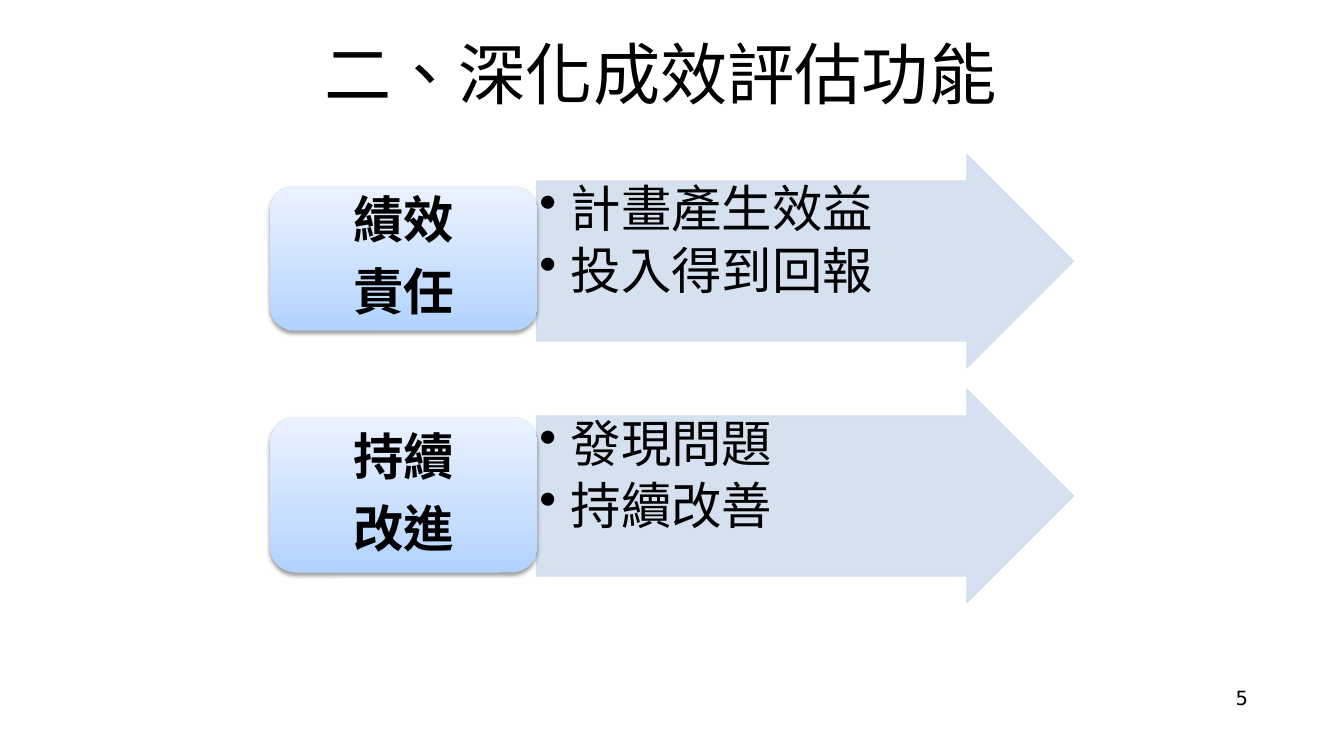
import pptx
import pptx.dml.color
import pptx.enum.shapes
import pptx.enum.text
import pptx.oxml
import pptx.oxml.ns
import pptx.util
from dataclasses import dataclass

Inches = pptx.util.Inches
Pt = pptx.util.Pt
Align = pptx.enum.text.PP_ALIGN
Anchor = pptx.enum.text.MSO_ANCHOR
Preset = pptx.enum.shapes.MSO_SHAPE
NAMESPACE = pptx.oxml.ns.nsdecls("a")


@dataclass(frozen=True)
class Theme:
    text: str = "000000"
    arrow: str = "D2DEEF"
    card_stops: tuple = ((0, "B0D2FF"), (35, "C7DEFF"), (100, "EAF2FF"))
    heading_font: str = "Noto Sans CJK SC"
    bullet_font: str = "Calibri"
    number_font: str = "DejaVu Sans"
    title_size: int = 48
    body_size: int = 36
    number_size: int = 14


THEME = Theme()

# Label lines, bullet lines, arrow top, card top and card height
ROWS = [
    (("績效", "責任"), ("計畫產生效益", "投入得到回報"), 1.53, 1.85, 1.43),
    (("持續", "改進"), ("發現問題", "持續改善"), 3.86, 4.14, 1.54),
]


def color(code):
    return pptx.dml.color.RGBColor.from_string(code)


def xml(markup):
    return pptx.oxml.parse_xml(markup)


def write(shape, lines, font, size, align, anchor, insets, bold=False,
          after=0, bulleted=False):
    frame = shape.text_frame
    frame.word_wrap = True
    frame.auto_size = pptx.enum.text.MSO_AUTO_SIZE.NONE
    frame.vertical_anchor = anchor
    frame.margin_left = frame.margin_right = Inches(insets[0])
    frame.margin_top = frame.margin_bottom = Inches(insets[1])
    frame.text = "\n".join(lines)
    for para in frame.paragraphs:
        if bulleted:
            add_bullet(para)
        para.alignment = align
        if after:
            para.line_spacing = 0.9
            para.space_after = Pt(after)
        for span in para.runs:
            span.font.name = font
            span.font.size = Pt(size)
            span.font.bold = bold
            span.font.color.rgb = color(THEME.text)
            properties = span.font._element
            properties.set("lang", "zh-TW")
            properties.find(pptx.oxml.ns.qn("a:latin")).addnext(
                xml(f'<a:ea {NAMESPACE} typeface="{font}"/>'))


def add_bullet(para):
    properties = para._p.get_or_add_pPr()
    properties.set("marL", str(Inches(0.31)))
    properties.set("indent", str(-Inches(0.31)))
    properties.append(xml(f'<a:buChar {NAMESPACE} char="•"/>'))


def set_alpha(fill_parent, percent):
    for node in fill_parent.iter(pptx.oxml.ns.qn("a:srgbClr")):
        node.append(xml(f'<a:alpha {NAMESPACE} val="{percent * 1000}"/>'))


def add_title(page, left, top, width, height):
    title = page.shapes.title
    title.left, title.top = Inches(left), Inches(top)
    title.width, title.height = Inches(width), Inches(height)
    write(title, ["二、深化成效評估功能"], THEME.heading_font, THEME.title_size,
          Align.CENTER, Anchor.MIDDLE, (0.12, 0.06))


def add_arrow(page, lines, left, top, width, height):
    arrow = page.shapes.add_shape(Preset.RIGHT_ARROW, Inches(left), Inches(top),
                                  Inches(width), Inches(height))
    arrow.adjustments[0] = 0.75
    arrow.adjustments[1] = 0.5
    arrow.shadow.inherit = False
    arrow.fill.solid()
    arrow.fill.fore_color.rgb = color(THEME.arrow)
    arrow.line.color.rgb = color(THEME.arrow)
    arrow.line.width = Pt(0.75)
    set_alpha(arrow._element.spPr, 90)

    # Bullets fill the shaft, which is three quarters of the arrow's height
    box = page.shapes.add_textbox(Inches(left), Inches(top + height / 8),
                                  Inches(width - 0.79), Inches(height * 0.75))
    write(box, lines, THEME.bullet_font, THEME.body_size, Align.LEFT, Anchor.TOP,
          (0.03, 0.03), after=5.4, bulleted=True)


def add_card(page, lines, left, top, width, height):
    card = page.shapes.add_shape(Preset.ROUNDED_RECTANGLE, Inches(left), Inches(top),
                                 Inches(width), Inches(height))
    card.line.fill.background()
    stops = "".join(
        f'<a:gs pos="{position * 1000}"><a:srgbClr val="{code}"/></a:gs>'
        for position, code in THEME.card_stops)
    line = card._element.spPr.find(pptx.oxml.ns.qn("a:ln"))
    line.addprevious(xml(
        f'<a:gradFill {NAMESPACE} rotWithShape="1"><a:gsLst>{stops}</a:gsLst>'
        '<a:lin ang="16200000" scaled="0"/></a:gradFill>'))
    line.addnext(xml(
        f'<a:effectLst {NAMESPACE}><a:outerShdw blurRad="{Pt(3.1)}" dist="{Pt(1.6)}" '
        'dir="5400000" rotWithShape="0"><a:srgbClr val="000000">'
        '<a:alpha val="38000"/></a:srgbClr></a:outerShdw></a:effectLst>'))
    write(card, lines, THEME.heading_font, THEME.body_size, Align.CENTER,
          Anchor.MIDDLE, (0.15, 0.07), bold=True, after=12.6)


def add_page_number(page, left, top, width, height):
    box = page.shapes.add_textbox(Inches(left), Inches(top),
                                  Inches(width), Inches(height))
    write(box, ["5"], THEME.number_font, THEME.number_size, Align.RIGHT,
          Anchor.TOP, (0.12, 0.06))


def main():
    deck = pptx.Presentation()
    deck.slide_width, deck.slide_height = Inches(13.33), Inches(7.5)
    page = deck.slides.add_slide(deck.slide_layouts.get_by_name("Title Only"))

    add_title(page, 1.55, 0.29, 10, 0.87)
    for label, bullets, arrow_top, card_top, card_height in ROWS:
        add_arrow(page, bullets, 5.32, arrow_top, 5.33, 2.12)
        add_card(page, label, 2.68, card_top, 2.65, card_height)
    add_page_number(page, 9.61, 6.74, 2.89, 0.52)

    deck.save("out.pptx")


if __name__ == "__main__":
    main()
